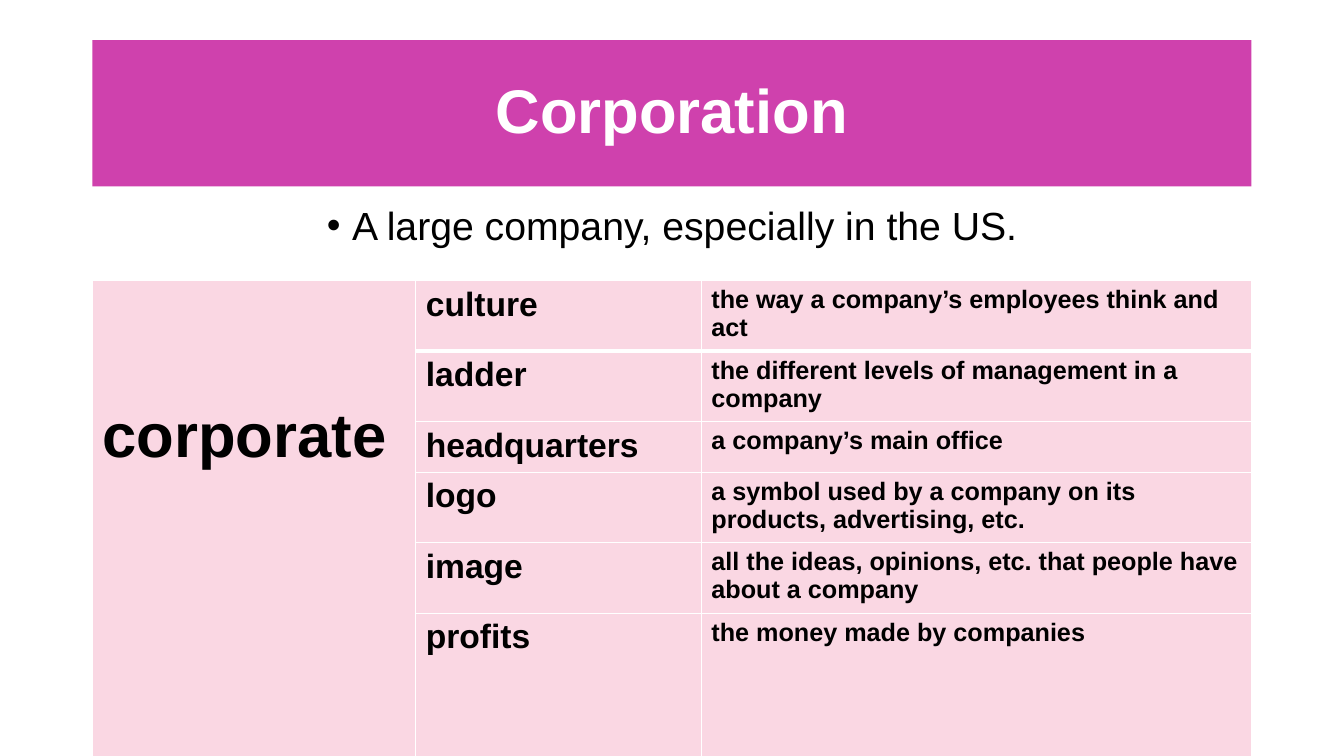
from dataclasses import dataclass

from lxml import etree
from pptx import Presentation
from pptx import util as u
from pptx.dml import color
from pptx.enum import shapes, text
from pptx.oxml import ns

MAGENTA = color.RGBColor(0xCF, 0x41, 0xAD)
PINK = color.RGBColor(0xFA, 0xD7, 0xE3)
WHITE = color.RGBColor(0xFF, 0xFF, 0xFF)
BLACK = color.RGBColor(0x00, 0x00, 0x00)

LEFT, WIDTH = u.Pt(66), u.Pt(828)
COLUMN_WIDTHS = (231, 204, 393)


@dataclass(frozen=True)
class Collocation:
    word: str
    meaning: str
    height: float


COLLOCATIONS = (
    Collocation("culture", "the way a company’s employees think and act", 48.4),
    Collocation("ladder", "the different levels of management in a company", 48.4),
    Collocation("headquarters", "a company’s main office", 36),
    Collocation("logo", "a symbol used by a company on its products, advertising, etc.", 48.4),
    Collocation("image", "all the ideas, opinions, etc. that people have about a company", 48.4),
    Collocation("profits", "the money made by companies", 36),
)


def add_span(para, words: str, size: float, ink: color.RGBColor = BLACK, bold: bool = True) -> None:
    span = para.add_run()
    span.text = words
    span.font.name = "Arial"
    span.font.size = u.Pt(size)
    span.font.bold = bold
    span.font.color.rgb = ink


def add_bullet(para, indent: int) -> None:
    properties = para._p.get_or_add_pPr()
    properties.set("marL", str(indent))
    properties.set("indent", str(-indent))
    font = etree.SubElement(properties, ns.qn("a:buFont"))
    font.set("typeface", "Arial")
    bullet = etree.SubElement(properties, ns.qn("a:buChar"))
    bullet.set("char", "•")


def add_borders(cell, bottom_width: float) -> None:
    properties = cell._tc.get_or_add_tcPr()
    for side, width in (("L", 1), ("R", 1), ("T", 1), ("B", bottom_width)):
        line = etree.SubElement(properties, ns.qn(f"a:ln{side}"))
        line.set("w", str(u.Pt(width)))
        fill = etree.SubElement(line, ns.qn("a:solidFill"))
        etree.SubElement(fill, ns.qn("a:srgbClr")).set("val", str(WHITE))


def add_title(page) -> None:
    box = page.shapes.add_shape(shapes.MSO_SHAPE.RECTANGLE, LEFT, u.Pt(28.75), WIDTH, u.Pt(104.4))
    box.shadow.inherit = False
    box.fill.solid()
    box.fill.fore_color.rgb = MAGENTA
    box.line.fill.background()
    box.text_frame.word_wrap = True
    box.text_frame.vertical_anchor = text.MSO_ANCHOR.MIDDLE
    para = box.text_frame.paragraphs[0]
    para.alignment = text.PP_ALIGN.CENTER
    para.line_spacing = 0.9
    add_span(para, "Corporation", 44, WHITE)


def add_definition(page) -> None:
    box = page.shapes.add_textbox(LEFT, u.Pt(144), WIDTH, u.Pt(342.6))
    box.text_frame.word_wrap = True
    para = box.text_frame.paragraphs[0]
    para.alignment = text.PP_ALIGN.CENTER
    para.line_spacing = 0.9
    add_bullet(para, u.Pt(18))
    add_span(para, "A large company, especially in the US.", 28, bold=False)


def add_collocations(page) -> None:
    frame = page.shapes.add_table(
        len(COLLOCATIONS), len(COLUMN_WIDTHS), LEFT, u.Pt(200.4), WIDTH, u.Pt(273.6)
    )
    table = frame.table
    table.first_row = False
    table.horz_banding = False
    for column, width in zip(table.columns, COLUMN_WIDTHS):
        column.width = u.Pt(width)
    for index, item in enumerate(COLLOCATIONS):
        table.rows[index].height = u.Pt(item.height)
        for column in range(len(COLUMN_WIDTHS)):
            cell = table.cell(index, column)
            add_borders(cell, 3 if index == 0 else 1)
            cell.fill.solid()
            cell.fill.fore_color.rgb = PINK
        add_span(table.cell(index, 1).text_frame.paragraphs[0], item.word, 24)
        add_span(table.cell(index, 2).text_frame.paragraphs[0], item.meaning, 18)
    heading = table.cell(0, 0)
    heading.merge(table.cell(len(COLLOCATIONS) - 1, 0))
    heading.margin_top = u.Pt(86.4)
    add_span(heading.text_frame.paragraphs[0], "corporate", 44)


def main() -> None:
    deck = Presentation()
    deck.slide_width, deck.slide_height = u.Pt(960), u.Pt(540)
    page = deck.slides.add_slide(deck.slide_layouts[6])
    add_title(page)
    add_definition(page)
    add_collocations(page)
    deck.save("out.pptx")


if __name__ == "__main__":
    main()
